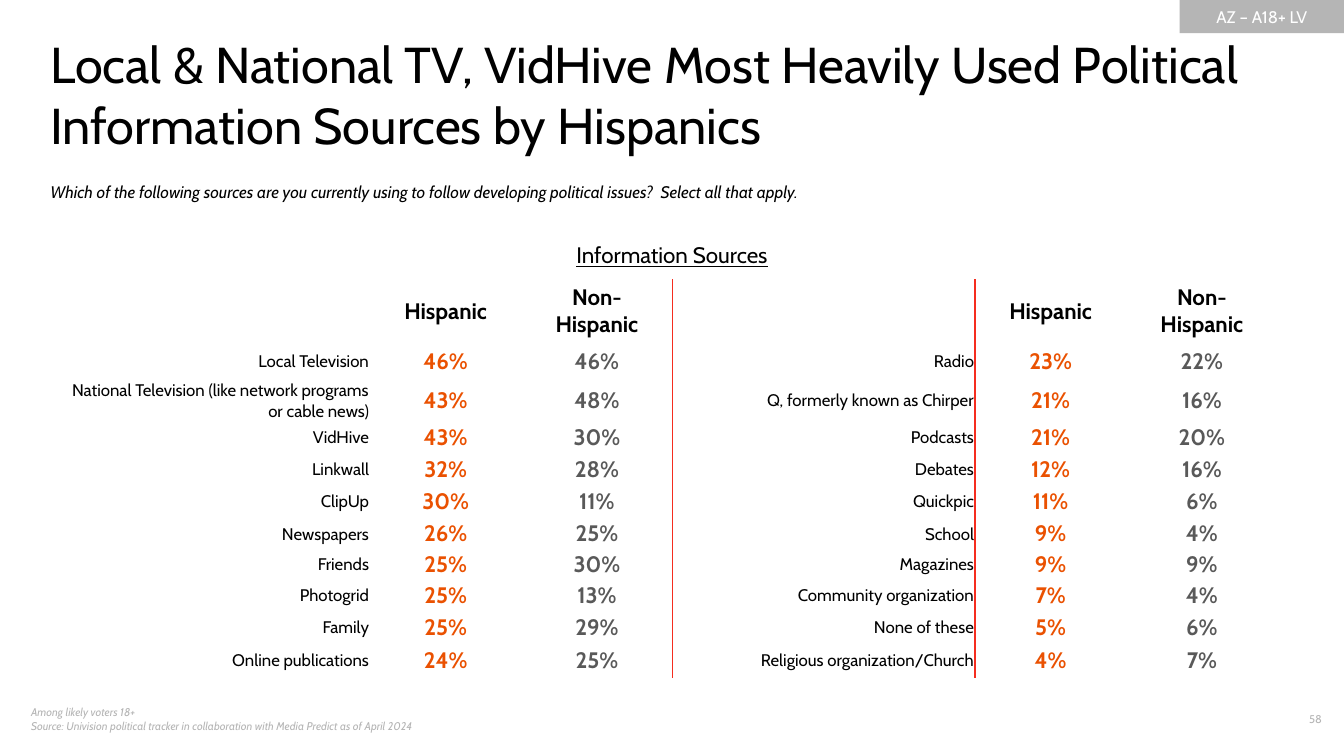
from lxml import etree
from pptx import Presentation
from pptx.dml.color import RGBColor
from pptx.enum.shapes import MSO_SHAPE
from pptx.enum.text import MSO_ANCHOR as Anchor, PP_ALIGN as Align
from pptx.oxml import parse_xml
from pptx.oxml.ns import nsdecls, qn
from pptx.util import Inches, Pt

FONT = "Cabin"
NO_STYLE = "{2D5ABB26-0587-4C30-8999-92F81FD0307C}"
COLORS = {
    "black": "000000",
    "white": "FFFFFF",
    "light_gray": "B5B5B5",
    "dark_gray": "595959",
    "orange": "EA5101",
    "red": "F52D1F",
}
COLUMN_WIDTHS = [3, 1.5, 1.5] * 2
ROW_HEIGHTS = [0.58, 0.36, 0.38, 0.32, 0.32, 0.32, 0.32, 0.29, 0.32, 0.32, 0.34]
HEADER = ["", "Hispanic", "Non-Hispanic"] * 2
SOURCES = [
    ("Local Television", "46%", "46%", "Radio", "23%", "22%"),
    ("National Television (like network programs or cable news)", "43%", "48%",
     "Q, formerly known as Chirper", "21%", "16%"),
    ("VidHive", "43%", "30%", "Podcasts", "21%", "20%"),
    ("Linkwall", "32%", "28%", "Debates", "12%", "16%"),
    ("ClipUp", "30%", "11%", "Quickpic", "11%", "6%"),
    ("Newspapers", "26%", "25%", "School", "9%", "4%"),
    ("Friends", "25%", "30%", "Magazines", "9%", "9%"),
    ("Photogrid", "25%", "13%", "Community organization", "7%", "4%"),
    ("Family", "25%", "29%", "None of these", "5%", "6%"),
    ("Online publications", "24%", "25%", "Religious organization/Church", "4%", "7%"),
]
COLUMN_STYLES = [
    (12, "black", False, Align.RIGHT),
    (16, "orange", True, Align.CENTER),
    (16, "dark_gray", True, Align.CENTER),
]


def add_run(paragraph, text, size, color, bold=False, italic=False, underline=False):
    run = paragraph.add_run()
    run.text = text
    font = run.font
    font.name = FONT
    font.size = Pt(size)
    font.color.rgb = RGBColor.from_string(COLORS[color])
    font.bold = bold
    font.italic = italic
    font.underline = underline


def add_text(slide, box, lines, size, color, align=Align.LEFT, anchor=Anchor.TOP,
             inset=True, **style):
    frame = slide.shapes.add_textbox(*map(Inches, box)).text_frame
    frame.word_wrap = True
    frame.vertical_anchor = anchor
    if not inset:
        frame.margin_left = frame.margin_right = 0
        frame.margin_top = frame.margin_bottom = 0
    paragraph = frame.paragraphs[0]
    paragraph.alignment = align
    for index, line in enumerate(lines):
        if index:
            paragraph.add_line_break()
        add_run(paragraph, line, size, color, **style)


def add_audience_tag(slide, box):
    tag = slide.shapes.add_shape(MSO_SHAPE.RECTANGLE, *map(Inches, box))
    tag.shadow.inherit = False
    tag.fill.solid()
    tag.fill.fore_color.rgb = RGBColor.from_string(COLORS["light_gray"])
    tag.line.fill.background()
    tag.text_frame.vertical_anchor = Anchor.MIDDLE
    paragraph = tag.text_frame.paragraphs[0]
    paragraph.alignment = Align.CENTER
    add_run(paragraph, "AZ – A18+ LV", 12, "white")


def add_heading(slide, left, top):
    add_text(slide, (left, top, 12, 1.21),
             ["Local & National TV, VidHive Most Heavily Used Political "
              "Information Sources by Hispanics"], 36, "black", inset=False)
    add_text(slide, (left, top + 1.47, 11.01, 0.2),
             ["Which of the following sources are you currently using to follow "
              "developing political issues?  Select all that apply."],
             12, "black", inset=False, italic=True)


def add_footer(slide, left, top):
    add_text(slide, (left, top, 5.11, 0.4),
             ["Among likely voters 18+",
              "Source: Univision political tracker in collaboration with "
              "Media Predict as of April 2024"], 8, "light_gray", italic=True)
    add_text(slide, (left + 12.12, top + 0.07, 0.88, 0.27), ["58"], 8, "light_gray",
             align=Align.RIGHT)


def set_divider(cell, tag):
    border = parse_xml(f'<a:{tag} {nsdecls("a")} w="12700"/>')
    fill = etree.SubElement(border, qn("a:solidFill"))
    etree.SubElement(fill, qn("a:srgbClr"), val=COLORS["red"])
    cell._tc.get_or_add_tcPr().insert(0, border)


def fill_cell(cell, text, size, color, bold, align):
    cell.vertical_anchor = Anchor.MIDDLE
    paragraph = cell.text_frame.paragraphs[0]
    paragraph.alignment = align
    if text:
        add_run(paragraph, text, size, color, bold)


def add_sources_table(slide, box):
    rows = [HEADER, *SOURCES]
    table = slide.shapes.add_table(len(rows), len(HEADER), *map(Inches, box)).table
    table.first_row = table.horz_banding = False
    table._tbl.tblPr.find(qn("a:tableStyleId")).text = NO_STYLE
    for column, width in zip(table.columns, COLUMN_WIDTHS):
        column.width = Inches(width)
    for row_index, (values, height) in enumerate(zip(rows, ROW_HEIGHTS)):
        table.rows[row_index].height = Inches(height)
        for column_index, value in enumerate(values):
            cell = table.cell(row_index, column_index)
            cell.fill.background()
            if row_index == 0:
                fill_cell(cell, value, 16, "black", True, Align.CENTER)
            else:
                cell.margin_left = cell.margin_right = cell.margin_top = Inches(0.01)
                cell.margin_bottom = 0
                fill_cell(cell, value, *COLUMN_STYLES[column_index % 3])
        set_divider(table.cell(row_index, 2), "lnR")
        set_divider(table.cell(row_index, 3), "lnL")


def main():
    presentation = Presentation()
    presentation.slide_width = Inches(13.33)
    presentation.slide_height = Inches(7.5)
    slide = presentation.slides.add_slide(presentation.slide_layouts[6])
    add_audience_tag(slide, (11.7, 0, 1.63, 0.33))
    add_footer(slide, 0.21, 6.95)
    add_heading(slide, 0.5, 0.33)
    add_text(slide, (4.05, 2.29, 5.23, 0.48), ["Information Sources"], 16, "black",
             align=Align.CENTER, anchor=Anchor.MIDDLE, underline=True)
    add_sources_table(slide, (0.67, 2.77, 12, 3.9))
    presentation.save("out.pptx")


if __name__ == "__main__":
    main()
